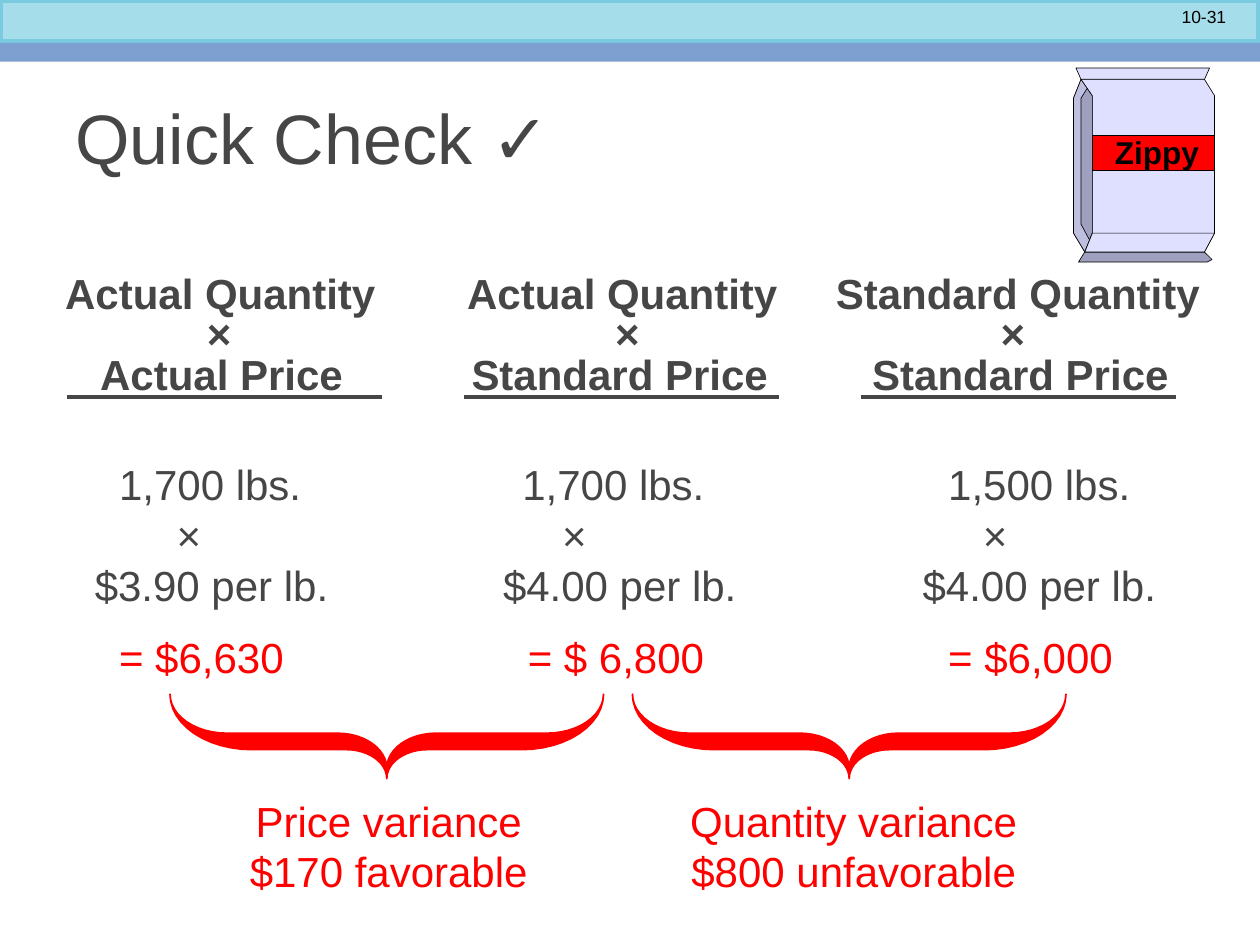
from dataclasses import dataclass
from math import cos, radians, sin

from pptx import Presentation
from pptx.dml.color import RGBColor
from pptx.enum.shapes import MSO_CONNECTOR as Connector, MSO_SHAPE as Preset
from pptx.enum.text import MSO_ANCHOR as Anchor, MSO_AUTO_SIZE as AutoSize, PP_ALIGN as Align
from pptx.oxml.ns import qn
from pptx.util import Inches, Pt
from lxml.etree import SubElement

GREY, RED, BLACK = "464646", "FF0000", "000000"
BLUE, LILAC, SIDE, SHADE = "7DA0D0", "DFDFFF", "BFBFDF", "9F9FBF"
INSET = 0.1
LINE_PITCH = 28.9

Point = tuple[float, float]


@dataclass
class Row:
    cells: tuple[str, str, str]
    centers: tuple[float, float, float]
    color: str = GREY
    before: float = 0


@dataclass
class Panel:
    points: list[Point]
    fill: str


@dataclass
class Variance:
    text: str
    text_left: float
    brace_center: float


HEADINGS = [
    Row(("Actual Quantity", "Actual Quantity", "Standard Quantity"), (1.75, 4.94, 8.08)),
    Row(("×", "×", "×"), (1.74, 4.98, 8.04)),
    Row(("Actual Price", "Standard Price", "Standard Price"), (1.76, 4.92, 8.1)),
]
FIGURES = [
    Row(("1,700 lbs.", "1,700 lbs.", "1,500 lbs."), (1.67, 4.87, 8.25)),
    Row(("×", "×", "×"), (1.5, 4.56, 7.9)),
    Row(("$3.90 per lb.", "$4.00 per lb.", "$4.00 per lb."), (1.68, 4.92, 8.25)),
    Row(("= $6,630", "= $ 6,800", "= $6,000"), (1.6, 4.89, 8.18), RED, 12),
]
VARIANCES = [
    Variance("Price variance\v$170 favorable", 0.96, 3.07),
    Variance("Quantity variance\v$800 unfavorable", 4.65, 6.74),
]
PACKAGE = [
    Panel([(8.58, 0.63), (8.52, 0.78), (8.52, 1.85), (8.61, 2), (8.67, 1.85), (8.67, 0.76)], SHADE),
    Panel([(8.58, 0.63), (8.63, 0.7), (8.58, 0.78), (8.58, 1.78), (8.65, 1.91), (8.61, 2),
           (8.52, 1.85), (8.52, 0.78)], SIDE),
    Panel([(8.58, 0.63), (8.54, 0.54), (9.6, 0.54), (9.56, 0.63)], LILAC),
    Panel([(8.61, 2), (9.56, 2), (9.62, 2.06), (9.58, 2.08), (8.56, 2.08)], SHADE),
    Panel([(8.61, 2), (9.56, 2), (9.64, 1.85), (9.64, 0.76), (9.56, 0.63), (8.58, 0.63),
           (8.67, 0.76), (8.67, 1.85)], LILAC),
    Panel([(8.67, 1.07), (9.64, 1.07), (9.64, 1.35), (8.67, 1.35)], RED),
    Panel([(8.67, 1.85), (8.61, 2), (9.56, 2), (9.64, 1.85)], LILAC),
]


def rgb(color: str) -> RGBColor:
    return RGBColor.from_string(color)


def paint(shape, fill: str, line: str | None = None, width: float = 0) -> None:
    shape.shadow.inherit = False
    shape.fill.solid()
    shape.fill.fore_color.rgb = rgb(fill)
    if line:
        shape.line.color.rgb = rgb(line)
        shape.line.width = Pt(width)
    else:
        shape.line.fill.background()


def style(para, size: float, color: str, bold: bool = False) -> None:
    for name, value in {"name": "Arial", "size": Pt(size), "bold": bold}.items():
        setattr(para.font, name, value)
    para.font.color.rgb = rgb(color)


def add_bar(page, top: float, height: float, fill: str, line: str | None = None) -> None:
    bar = page.shapes.add_shape(Preset.RECTANGLE, 0, Inches(top), Inches(10), Inches(height))
    paint(bar, fill, line, 4)


def add_box(page, left: float, top: float, width: float, height: float):
    box = page.shapes.add_textbox(*map(Inches, (left, top, width, height)))
    box.text_frame.word_wrap = True
    return box.text_frame


def add_label(page, text: str, area: tuple[float, ...], size: float, color: str,
              align: Align, bold: bool = False):
    para = add_box(page, *area).paragraphs[0]
    para.text = text
    para.alignment = align
    style(para, size, color, bold)
    return para


def add_rows(page, rows: list[Row], area: tuple[float, ...], pitch: float, bold: bool) -> None:
    """Write one paragraph per row, its cells centred on tab stops."""
    frame = add_box(page, *area)
    for index, row in enumerate(rows):
        para = frame.paragraphs[0] if index == 0 else frame.add_paragraph()
        para.text = "".join(f"\t{cell}" for cell in row.cells)
        para.line_spacing = Pt(pitch)
        para.space_before = Pt(row.before)
        stops = SubElement(para._p.get_or_add_pPr(), qn("a:tabLst"))
        for center in row.centers:
            SubElement(stops, qn("a:tab"), pos=str(Inches(center - area[0] - INSET)), algn="ctr")
        style(para, 24, row.color, bold)


def add_outline(page, points: list[Point], fill: str, line: str, width: float) -> None:
    corners = [(Inches(x), Inches(y)) for x, y in points]
    builder = page.shapes.build_freeform(*corners[0])
    builder.add_line_segments(corners[1:], close=True)
    paint(builder.convert_to_shape(), fill, line, width)


def arc(x: float, y: float, across: float, down: float, start: int, end: int) -> list[Point]:
    """Points on a quarter ellipse around (x, y), angles in degrees."""
    angles = [radians(start + (end - start) * step / 12) for step in range(13)]
    return [(x + across * cos(angle), y + down * sin(angle)) for angle in angles]


def add_brace(page, center: float, top: float) -> None:
    upper = arc(1.27, 0, 0.45, 0.31, 0, 90) + arc(0.39, 0.59, 0.39, 0.28, -90, -180)
    lower = arc(1.07, 0, 0.65, 0.44, 0, 90) + arc(0.32, 0.67, 0.32, 0.23, -90, -180)
    left_upper, left_lower = ([(-x, y) for x, y in edge] for edge in (upper, lower))
    outline = upper + left_upper[::-1] + left_lower + lower[::-1]
    add_outline(page, [(center + x, top + y) for x, y in outline], RED, RED, 1)


def add_rule(page, left: float, top: float, width: float) -> None:
    ends = map(Inches, (left, top, left + width, top))
    rule = page.shapes.add_connector(Connector.STRAIGHT, *ends)
    rule.line.color.rgb = rgb(GREY)
    rule.line.width = Pt(2.25)
    SubElement(rule._element.spPr, qn("a:effectLst"))


def set_title(page, text: str) -> None:
    title = page.shapes.title
    for name, value in {"left": 0.5, "top": 0.5, "width": 9, "height": 1.17}.items():
        setattr(title, name, Inches(value))
    frame = title.text_frame
    frame.text = text
    frame.vertical_anchor = Anchor.MIDDLE
    frame.auto_size = AutoSize.NONE
    frame.paragraphs[0].alignment = Align.LEFT
    style(frame.paragraphs[0], 40, GREY)


def main() -> None:
    deck = Presentation()
    deck.slide_width, deck.slide_height = Inches(10), Inches(7.5)
    page = deck.slides.add_slide(deck.slide_layouts[5])

    add_bar(page, 0, 0.34, "A6DDEA", "7ACBE0")
    add_bar(page, 0.4, 0.09, BLUE)
    add_bar(page, 0.34, 0.1, BLUE)
    add_label(page, "10-31", (8.5, 0, 1.33, 0.27), 10, BLACK, Align.RIGHT)
    set_title(page, "Quick Check ✓")

    for panel in PACKAGE:
        add_outline(page, panel.points, panel.fill, BLACK, 0.38)
    add_label(page, "Zippy", (8.75, 1.01, 1.08, 0.4), 18, BLACK, Align.LEFT, bold=True)

    add_rows(page, HEADINGS, (0.25, 2.15, 9.58, 1.07), LINE_PITCH * 0.8, bold=True)
    for column in range(3):
        add_rule(page, 0.53 + 3.15 * column, 3.15, 2.5)
    add_rows(page, FIGURES, (0.29, 3.59, 9.41, 1.91), LINE_PITCH, bold=False)

    for variance in VARIANCES:
        add_brace(page, variance.brace_center, 5.51)
        area = (variance.text_left, 6.26, 4.25, 0.91)
        para = add_label(page, variance.text, area, 24, RED, Align.CENTER)
        para.line_spacing = Pt(LINE_PITCH)

    deck.save("out.pptx")


if __name__ == "__main__":
    main()
